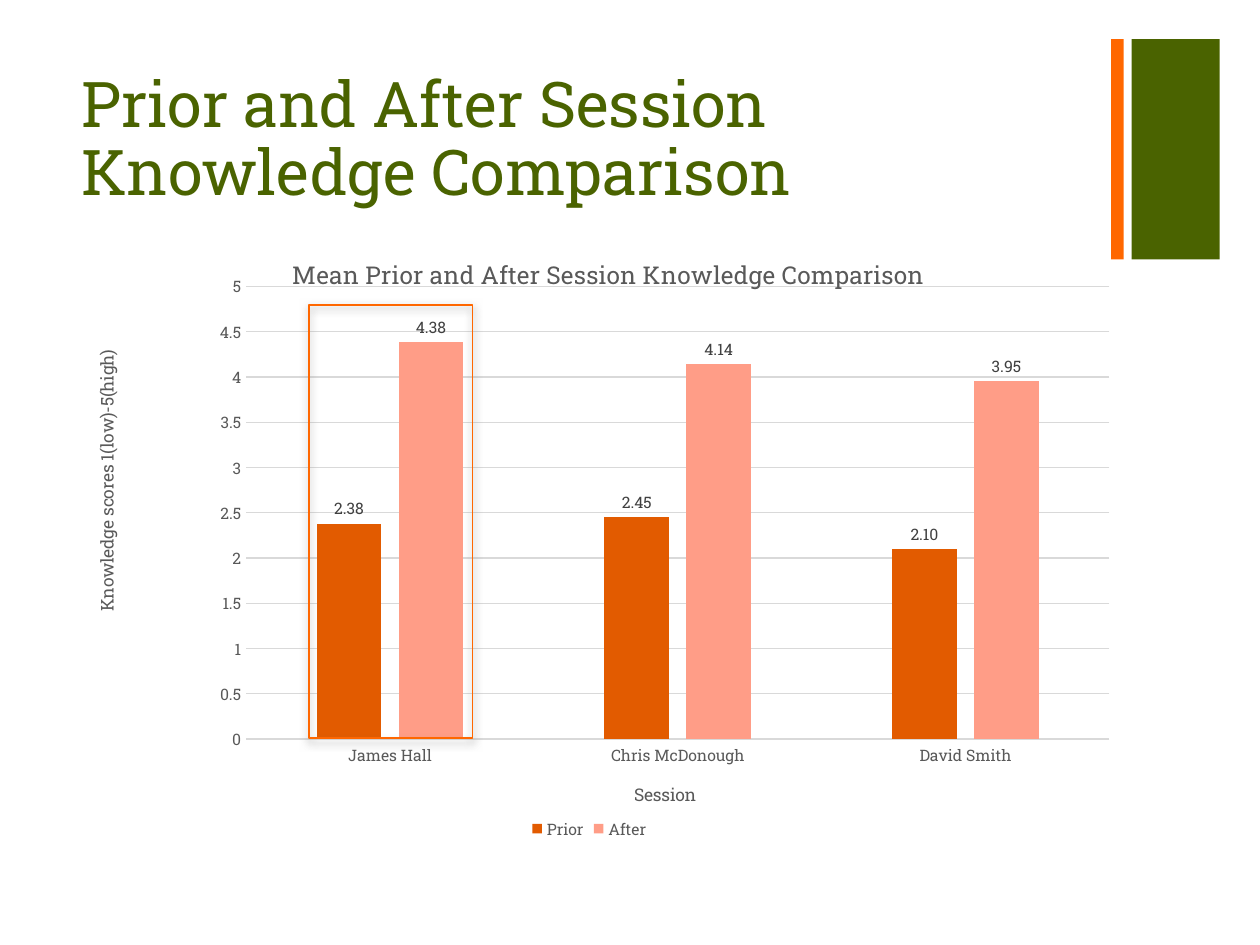
from dataclasses import dataclass

from lxml import etree
from pptx import Presentation
from pptx import util as u
from pptx.chart.data import CategoryChartData
from pptx.dml.color import RGBColor
from pptx.enum import chart as charts, shapes, text
from pptx.oxml import ns

Pt = u.Pt


@dataclass(frozen=True)
class Theme:
    font: str = "Roboto Slab"
    green: str = "4A6300"
    orange: str = "FF6700"
    prior: str = "E25B00"
    after: str = "FF9D87"
    grid: str = "D9D9D9"
    muted: str = "595959"
    label: str = "404040"
    shadow: str = "808080"
    heading_size: float = 36
    chart_title_size: float = 14
    axis_title_size: float = 10
    small_size: float = 9


THEME = Theme()


def style_font(font, size, color):
    font.name = THEME.font
    font.size = Pt(size)
    font.bold = False
    font.color.rgb = RGBColor.from_string(color)


def add_rectangle(slide, left, top, width, height, fill=None, line=None):
    shape = slide.shapes.add_shape(
        shapes.MSO_SHAPE.RECTANGLE, Pt(left), Pt(top), Pt(width), Pt(height))
    shape.shadow.inherit = False
    if fill:
        shape.fill.solid()
        shape.fill.fore_color.rgb = RGBColor.from_string(fill)
    else:
        shape.fill.background()
    if line:
        shape.line.color.rgb = RGBColor.from_string(line)
        shape.line.width = Pt(1)
    else:
        shape.line.fill.background()
    return shape


def add_shadow(shape):
    effects = shape._element.spPr.find(ns.qn("a:effectLst"))
    shadow = etree.SubElement(
        effects, ns.qn("a:outerShdw"), blurRad=str(Pt(5)), dist=str(Pt(2)),
        dir=str(90 * 60000), rotWithShape="0")
    color = etree.SubElement(shadow, ns.qn("a:srgbClr"), val=THEME.shadow)
    etree.SubElement(color, ns.qn("a:alpha"), val="75000")


def add_heading(slide, words):
    box = slide.shapes.add_textbox(Pt(39.6), Pt(38.2), Pt(594.7), Pt(87.8))
    frame = box.text_frame
    frame.word_wrap = True
    frame.vertical_anchor = text.MSO_ANCHOR.TOP
    frame.text = words
    paragraph = frame.paragraphs[0]
    paragraph.line_spacing = 0.9
    style_font(paragraph.runs[0].font, THEME.heading_size, THEME.green)


def manual_layout(**values):
    layout = etree.Element(ns.qn("c:layout"))
    manual = etree.SubElement(layout, ns.qn("c:manualLayout"))
    for name, value in values.items():
        etree.SubElement(manual, ns.qn(f"c:{name}"), val=str(value))
    return layout


def remove_layout(parent):
    for layout in parent.findall(ns.qn("c:layout")):
        parent.remove(layout)


def set_title(title, words, size, x, y):
    title.text_frame.text = words
    style_font(title.text_frame.paragraphs[0].runs[0].font, size, THEME.muted)
    element = title._element
    remove_layout(element)
    element.find(ns.qn("c:tx")).addnext(
        manual_layout(xMode="edge", yMode="edge", x=x, y=y))


def style_axis(axis, title, x, y):
    axis.major_tick_mark = charts.XL_TICK_MARK.NONE
    axis.minor_tick_mark = charts.XL_TICK_MARK.NONE
    style_font(axis.tick_labels.font, THEME.small_size, THEME.muted)
    set_title(axis.axis_title, title, THEME.axis_title_size, x, y)


def style_line(line):
    line.color.rgb = RGBColor.from_string(THEME.grid)
    line.width = Pt(0.75)


def style_series(series, color):
    series.format.fill.solid()
    series.format.fill.fore_color.rgb = RGBColor.from_string(color)
    series.invert_if_negative = False
    labels = series.data_labels
    labels.show_value = True
    labels.number_format = "0.00"
    labels.number_format_is_linked = False
    labels.position = charts.XL_LABEL_POSITION.OUTSIDE_END
    style_font(labels.font, THEME.small_size, THEME.label)


def add_knowledge_chart(slide):
    data = CategoryChartData()
    data.categories = ["James Hall", "Chris McDonough", "David Smith"]
    data.add_series("Prior", (2.38, 2.45, 2.10))
    data.add_series("After", (4.38, 4.14, 3.95))
    chart = slide.shapes.add_chart(
        charts.XL_CHART_TYPE.COLUMN_CLUSTERED,
        Pt(39.6), Pt(139.7), Pt(594.7), Pt(342.7), data).chart
    style_font(chart.font, THEME.axis_title_size, "000000")

    chart.has_title = True
    set_title(chart.chart_title, "Mean Prior and After Session Knowledge Comparison",
              THEME.chart_title_size, 0.21, 0.01)
    chart.has_legend = True
    chart.legend.position = charts.XL_LEGEND_POSITION.BOTTOM
    chart.legend.include_in_layout = False
    style_font(chart.legend.font, THEME.small_size, THEME.muted)

    style_axis(chart.category_axis, "Session", 0.54, 0.89)
    style_line(chart.category_axis.format.line)
    value_axis = chart.value_axis
    style_axis(value_axis, "Knowledge scores 1(low)-5(high)", 0.02, 0.17)
    value_axis.format.line.fill.background()
    value_axis.minimum_scale, value_axis.maximum_scale = 0, 5
    value_axis.major_unit = 0.5
    value_axis.tick_labels.number_format = "General"
    value_axis.tick_labels.number_format_is_linked = False
    style_line(value_axis.major_gridlines.format.line)

    plot = chart.plots[0]
    plot.gap_width, plot.overlap = 219, -27
    plot.vary_by_categories = False
    for series, color in zip(plot.series, (THEME.prior, THEME.after)):
        style_series(series, color)

    plot_area = chart._chartSpace.chart.plotArea
    remove_layout(plot_area)
    plot_area.insert(0, manual_layout(
        layoutTarget="inner", xMode="edge", yMode="edge",
        x=0.17, y=0.07, w=0.83, h=0.755))


def main():
    presentation = Presentation()
    presentation.slide_width, presentation.slide_height = Pt(720), Pt(540)
    slide = presentation.slides.add_slide(presentation.slide_layouts[6])
    add_rectangle(slide, 646.6, 22.3, 50.4, 126, fill=THEME.green)
    add_rectangle(slide, 635, 22.3, 7.2, 126, fill=THEME.orange)
    add_heading(slide, "Prior and After Session Knowledge Comparison")
    add_knowledge_chart(slide)
    highlight = add_rectangle(slide, 176.4, 174.2, 93.6, 247.7, line=THEME.orange)
    add_shadow(highlight)
    presentation.save("out.pptx")


if __name__ == "__main__":
    main()
